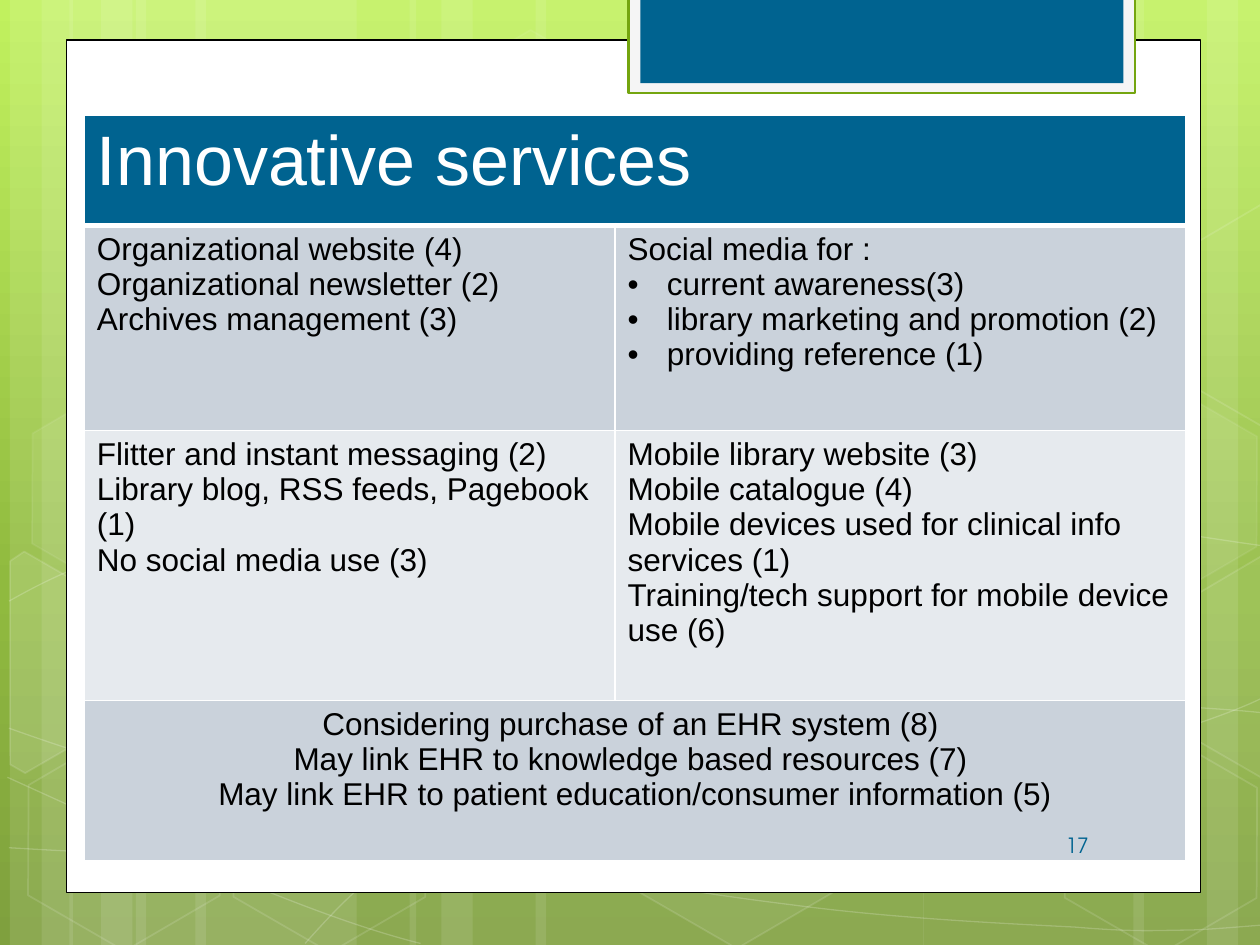
from dataclasses import dataclass

from lxml import etree
from pptx import Presentation
from pptx.dml.color import RGBColor
from pptx.enum.shapes import MSO_SHAPE
from pptx.enum.text import MSO_ANCHOR, PP_ALIGN
from pptx.oxml.ns import qn
from pptx.util import Cm, Pt

RECT, HEXAGON = MSO_SHAPE.RECTANGLE, MSO_SHAPE.HEXAGON
LEFT, CENTER, RIGHT = PP_ALIGN.LEFT, PP_ALIGN.CENTER, PP_ALIGN.RIGHT
MIDDLE = MSO_ANCHOR.MIDDLE
WIDTH, HEIGHT = 25.4, 19.05


@dataclass(frozen=True)
class Theme:
    white: str = "FFFFFF"
    black: str = "000000"
    blue: str = "006390"
    frame: str = "F5F5F5"
    green: str = "74A50F"
    row_dark: str = "CAD2DB"
    row_light: str = "E6EAEE"
    sky: tuple = ((0, "C1F15E"), (62, "90BA3F"), (100, "7FA03E"))
    font: str = "Arial"
    number_font: str = "TeX Gyre Adventor"
    title: int = 40
    body: int = 18
    number: int = 12


T = Theme()

# Hexagons: left, top, fill opacity, line opacity
TILT = 30
HEXAGONS = [(8.48, 0.91, 4, 8), (12.62, 14.96, 6, 12), (0.28, 15.01, 0, 12),
            (0.36, 7.92, 7, 8), (4.42, 15.04, 0, 12), (19.13, 11.51, 10, 12),
            (21.18, 15.06, 0, 12), (21.18, 7.98, 7, 8)]
# Hexagons cut by the slide's edge: corners before tilting, inside their own box
LEFT_CUT = [(0, 0.31), (0.15, 0), (2.4, 0), (3.5, 1.95), (2.4, 3.86), (2.05, 3.86)]
RIGHT_CUT = [(0, 1.91), (1.08, 0), (1.32, 0), (3.45, 3.67), (3.34, 3.86), (1.12, 3.86)]
CUTS = [(LEFT_CUT, -0.84, 11.66, 10), (RIGHT_CUT, 23.29, 11.28, 4), (RIGHT_CUT, 23.29, 4.19, 0)]

# Bezier chains: a start point, then two controls and an end for each piece
CURVES = [
    [(0.18, 17.09), (1.55, 17.17), (2.92, 17.25), (4.83, 17.22), (6.73, 17.2), (9.09, 17.15),
     (11.63, 16.89), (14.17, 16.64), (17.78, 16.15), (20.12, 15.67), (22.43, 15.19),
     (24.82, 14.43), (25.58, 14)],
    [(0.18, 12.12), (0.91, 11.71), (1.65, 11.33), (3.07, 10.95), (4.52, 10.57), (6.58, 10.01),
     (8.81, 9.83), (11.07, 9.65), (13.82, 9.63), (16.61, 9.83), (19.41, 10.03),
     (24.05, 10.82), (25.58, 11.02)],
    [(0.15, 15.67), (3.23, 17.07), (6.27, 18.47), (8.48, 19.02)],
    [(0.18, 14.68), (0.97, 14.96), (1.78, 15.24), (3.25, 15.65), (4.72, 16.03), (6.93, 16.66),
     (9.07, 17.09), (11.18, 17.53), (13.84, 17.98), (15.95, 18.24), (18.06, 18.52),
     (20.32, 18.62), (21.67, 18.69), (22.99, 18.8), (23.34, 18.75), (24, 18.75),
     (24.66, 18.72), (25.12, 18.67), (25.58, 18.64)],
    [(6.15, 19.02), (6.6, 18.52), (7.06, 18.01), (7.67, 17.55), (8.28, 17.09), (9.14, 16.59),
     (9.86, 16.23), (10.57, 15.88), (11, 15.72), (11.94, 15.47), (12.85, 15.21),
     (14.55, 14.86), (15.44, 14.68), (16.36, 14.5), (16.48, 14.5), (17.27, 14.45),
     (18.06, 14.38), (19.3, 14.3), (20.17, 14.27), (21.06, 14.25), (22.5, 14.27),
     (22.5, 14.27), (23.07, 14.27), (23.64, 14.27), (24.21, 14.27), (24.66, 14.3),
     (25.1, 14.33), (25.55, 14.38)],
]

# Table rows: fill and cells; a single cell spans the row, "•" marks a bullet
ROWS = [
    (T.blue, [["Innovative services"]]),
    (T.row_dark, [["Organizational website (4)", "Organizational newsletter (2)",
                   "Archives management (3)"],
                  ["Social media for :", "•current awareness(3)",
                   "•library marketing and promotion (2)", "•providing reference (1)"]]),
    (T.row_light, [["Flitter and instant messaging (2)", "Library blog, RSS feeds, Pagebook (1)",
                    "No social media use (3)"],
                   ["Mobile library website (3)", "Mobile catalogue (4)",
                    "Mobile devices used for clinical info services (1)",
                    "Training/tech support for mobile device use (6)"]]),
    (T.row_dark, [["Considering purchase of an EHR system (8) ",
                   "May link EHR to knowledge based resources (7) ",
                   "May link EHR to patient education/consumer information (5)"]]),
]
COLS = [10.7, 11.5]
HEIGHTS = [2.21, 4.14, 5.44, 3.23]


def paint(fill, color, opacity=100):
    """Solid fill with an opacity in percent; zero leaves no fill."""
    if not opacity:
        fill.background()
        return
    fill.solid()
    fill.fore_color.rgb = RGBColor.from_string(color)
    if opacity < 100:
        clr = fill._xPr.find(".//" + qn("a:srgbClr"))
        etree.SubElement(clr, qn("a:alpha"), val=str(opacity * 1000))


def style(sp, fill, fill_opacity=100, line=None, width=1, line_opacity=100):
    sp.shadow.inherit = False
    paint(sp.fill, fill, fill_opacity)
    if line:
        sp.line.width = Pt(width)
    paint(sp.line.fill, line, line_opacity if line else 0)


def add_shape(s, kind, box, **look):
    sp = s.shapes.add_shape(kind, *map(Cm, box))
    style(sp, **look)
    return sp


def add_outline(s, points, close, **look):
    pts = [(Cm(x), Cm(y)) for x, y in points]
    fb = s.shapes.build_freeform(*pts[0])
    fb.add_line_segments(pts[1:], close=close)
    sp = fb.convert_to_shape()
    style(sp, T.white, line=T.white, **look)
    return sp


def bend(sp):
    """Turn each three line segments of an outline into one Bezier piece."""
    lines = list(sp._element.iter(qn("a:lnTo")))
    for i in range(0, len(lines), 3):
        piece = etree.Element(qn("a:cubicBezTo"))
        lines[i].addprevious(piece)
        for line in lines[i:i + 3]:
            piece.append(line[0])
            line.getparent().remove(line)


def write(p, text, align=LEFT, **fmt):
    p.alignment = align
    r = p.add_run()
    r.text = text
    r.font.color.rgb = RGBColor.from_string(fmt.pop("color"))
    for name, value in fmt.items():
        setattr(r.font, name, value)


def add_bullet(p):
    pPr = p._p.get_or_add_pPr()
    for name, value in {"marL": Cm(0.79), "indent": -Cm(0.79)}.items():
        pPr.set(name, str(value))
    etree.SubElement(pPr, qn("a:buFont"), typeface=T.font)
    etree.SubElement(pPr, qn("a:buChar"), char="•")


def set_borders(cell, **widths):
    tcPr = cell._tc.get_or_add_tcPr()
    for side in "LRTB":
        ln = etree.SubElement(tcPr, qn(f"a:ln{side}"), w=str(Pt(widths.get(side, 1))))
        solid = etree.SubElement(ln, qn("a:solidFill"))
        etree.SubElement(solid, qn("a:srgbClr"), val=T.white)


def add_backdrop(s):
    # Gradient from top to bottom
    fill = s.background.fill
    fill.gradient()
    fill.gradient_angle = 270
    stops = s._element.find(".//" + qn("a:gsLst"))
    stops.clear()
    for pos, color in T.sky:
        gs = etree.SubElement(stops, qn("a:gs"), pos=str(pos * 1000))
        etree.SubElement(gs, qn("a:srgbClr"), val=color)
    # Bands in groups of three; the group on the right is mirrored
    for edge, wide, mirrored in ((0.2, 4.45, 0), (1.4, 4.45, 0), (25.6, 4.45, 1), (8.26, 7.82, 0)):
        for offset, w in ((2.54, wide), (0, 1.27), (0.64, 2.11)):
            x = edge - offset - w if mirrored else edge + offset
            add_shape(s, RECT, (x, 0, w, HEIGHT), fill=T.white, fill_opacity=10)
    # Curves and hexagons
    for chain in CURVES:
        bend(add_outline(s, chain, False, fill_opacity=0, width=0.75, line_opacity=20))
    for x, y, inside, edge in HEXAGONS:
        sp = add_shape(s, HEXAGON, (x, y, 4.45, 3.86), fill=T.white, fill_opacity=inside,
                       line=T.white, line_opacity=edge)
        sp.adjustments[0] = 0.285
        sp.rotation = TILT
    for corners, x, y, inside in CUTS:
        points = [(x + dx, y + dy) for dx, dy in corners]
        add_outline(s, points, True, fill_opacity=inside, line_opacity=12).rotation = TILT


def add_page(s, x, y, w, h):
    add_shape(s, RECT, (x, y, w, h), fill=T.white, line=T.black, width=0.75)
    # Tab hanging from the top edge
    add_shape(s, RECT, (x + 11.33, -0.05, 10.21, 1.93), fill=T.frame, line=T.green, width=1.25)
    add_shape(s, RECT, (x + 11.57, -0.05, 9.74, 1.73), fill=T.blue)


def add_services(s, x, y):
    box = map(Cm, (x, y, sum(COLS), sum(HEIGHTS)))
    table = s.shapes.add_table(len(ROWS), len(COLS), *box).table
    for col, w in zip(table.columns, COLS):
        col.width = Cm(w)
    for i, (color, texts) in enumerate(ROWS):
        table.rows[i].height = Cm(HEIGHTS[i])
        head = i == 0
        for cell in table.rows[i].cells:
            set_borders(cell, T=3 if i == 1 else 1, B=3 if head else 1)
            paint(cell.fill, color)
        spans = len(texts) == 1
        if spans:
            table.cell(i, 0).merge(table.cell(i, len(COLS) - 1))
        for j, lines in enumerate(texts):
            tf = table.cell(i, j).text_frame
            for k, line in enumerate(lines):
                p = tf.add_paragraph() if k else tf.paragraphs[0]
                write(p, line.lstrip("•"), CENTER if spans and not head else LEFT, name=T.font,
                      size=Pt(T.title if head else T.body), bold=False,
                      color=T.white if head else T.black)
                if line.startswith("•"):
                    add_bullet(p)


def add_number(s, x, y, w, h):
    tf = s.shapes.add_textbox(*map(Cm, (x, y, w, h))).text_frame
    tf.word_wrap = True
    tf.vertical_anchor = MIDDLE
    write(tf.paragraphs[0], "17", RIGHT, name=T.number_font, size=Pt(T.number), color=T.blue)


def main():
    prs = Presentation()
    prs.slide_width, prs.slide_height = Cm(WIDTH), Cm(HEIGHT)
    s = prs.slides.add_slide(prs.slide_layouts[6])
    add_backdrop(s)
    add_page(s, 1.34, 0.81, 22.86, 17.18)
    add_services(s, 1.7, 2.33)
    add_number(s, 18.49, 16.53, 3.71, 1.02)
    prs.save("out.pptx")


if __name__ == "__main__":
    main()
